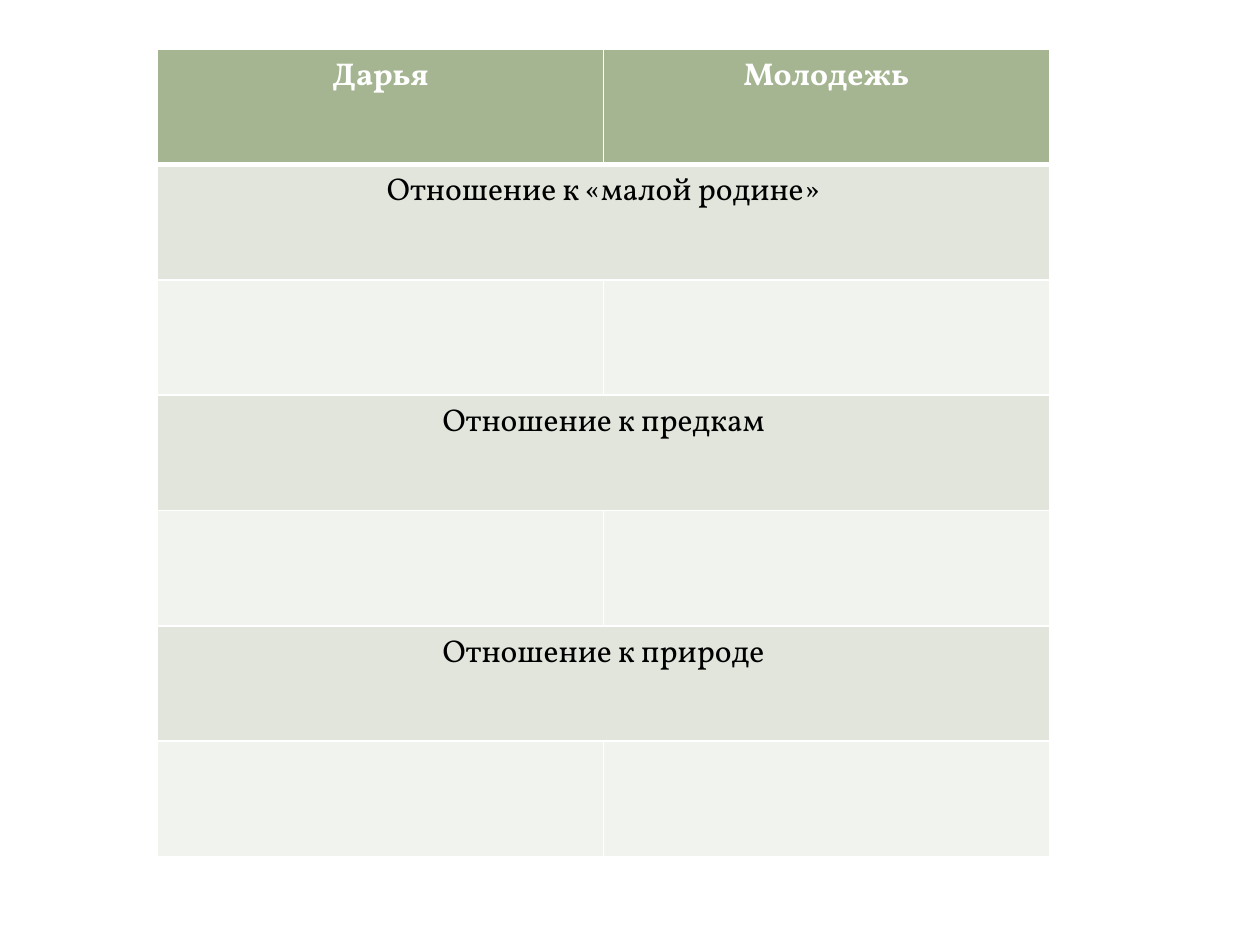
from lxml import etree
from pptx import Presentation
from pptx.dml.color import RGBColor
from pptx.enum.text import PP_ALIGN
from pptx.oxml.ns import qn
from pptx.util import Inches, Pt

CENTER = PP_ALIGN.CENTER
WHITE = RGBColor(0xFF, 0xFF, 0xFF)
BLACK = RGBColor(0x00, 0x00, 0x00)
GREEN = RGBColor(0xA5, 0xB5, 0x92)
SAGE = RGBColor(0xE1, 0xE5, 0xDC)
PALE = RGBColor(0xF0, 0xF3, 0xEE)

HEADERS = ["Дарья", "Молодежь"]
TOPICS = ["Отношение к «малой родине»", "Отношение к предкам", "Отношение к природе"]


class SlideBuilder:
    """Holds the text style and the current slide, and draws its elements."""

    def __init__(self, slide, font, size):
        self.slide, self.font, self.size = slide, font, size

    def border(self, cell, top, bottom):
        tcPr = cell._tc.get_or_add_tcPr()
        widths = {"a:lnL": 1, "a:lnR": 1, "a:lnT": top, "a:lnB": bottom}
        for i, (tag, width) in enumerate(widths.items()):
            ln = etree.Element(qn(tag), w=str(Pt(width)))
            fill = etree.SubElement(ln, qn("a:solidFill"))
            etree.SubElement(fill, qn("a:srgbClr"), val=str(WHITE))
            tcPr.insert(i, ln)

    def cell(self, cell, text, fill, color, bold=False, top=1, bottom=1):
        cell.fill.solid()
        cell.fill.fore_color.rgb = fill
        self.border(cell, top, bottom)
        p = cell.text_frame.paragraphs[0]
        p.text = text
        p.alignment = CENTER
        p.font.name, p.font.size, p.font.bold = self.font, Pt(self.size), bold
        p.font.color.rgb = color

    def comparison_table(self, left, top, width, height, headers, topics):
        rows, cols = 1 + 2 * len(topics), len(headers)
        table = self.slide.shapes.add_table(
            rows, cols, Inches(left), Inches(top), Inches(width), Inches(height)
        ).table
        for c, header in enumerate(headers):
            self.cell(table.cell(0, c), header, GREEN, WHITE, bold=True, bottom=3)
        for i, topic in enumerate(topics):
            row = 1 + 2 * i
            table.cell(row, 0).merge(table.cell(row, cols - 1))
            for c in range(cols):
                text = "" if c else topic
                self.cell(table.cell(row, c), text, SAGE, BLACK, top=1 if i else 3)
                self.cell(table.cell(row + 1, c), "", PALE, BLACK)


def main():
    prs = Presentation()
    prs.slide_width, prs.slide_height = Inches(10), Inches(7.5)
    s = prs.slides.add_slide(prs.slide_layouts[6])
    builder = SlideBuilder(s, "Vollkorn", 18)
    builder.comparison_table(1.25, 0.39, 7.08, 6.41, HEADERS, TOPICS)
    prs.save("out.pptx")


if __name__ == "__main__":
    main()
